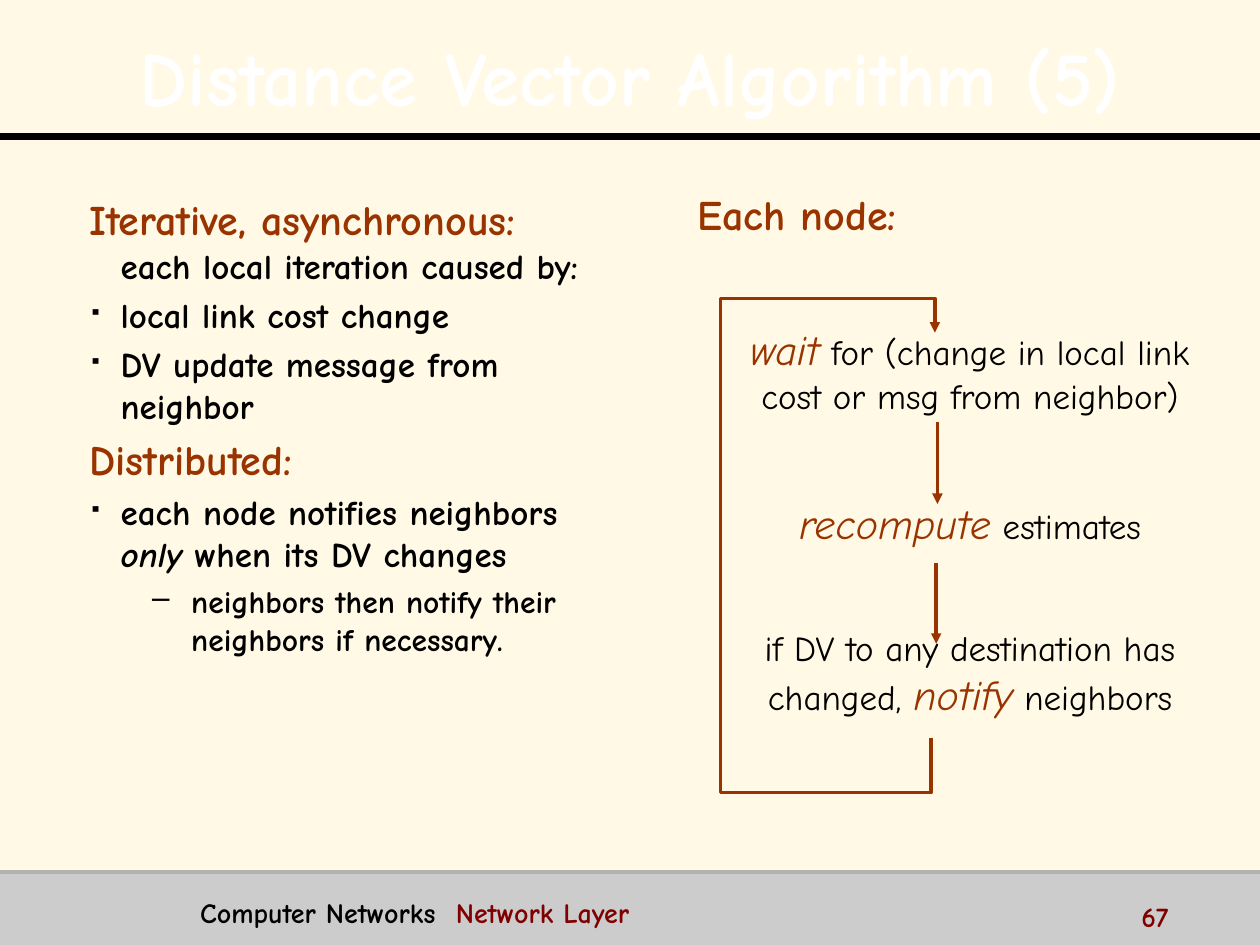
from lxml import etree
from pptx import Presentation
from pptx.dml.color import RGBColor
from pptx.enum.shapes import MSO_CONNECTOR, MSO_SHAPE
from pptx.enum.text import MSO_ANCHOR, PP_ALIGN
from pptx.oxml import parse_xml
from pptx.oxml.ns import nsdecls, qn
from pptx.util import Inches, Pt

LEFT, CENTER = PP_ALIGN.LEFT, PP_ALIGN.CENTER
TOP, MIDDLE = MSO_ANCHOR.TOP, MSO_ANCHOR.MIDDLE
STRAIGHT = MSO_CONNECTOR.STRAIGHT
RECT = MSO_SHAPE.RECTANGLE

FONT = "Comic Neue"
COLORS = {
    "paper": "FFF9E6", "band": "CCCCCC", "rule": "B2B2B2", "black": "000000",
    "white": "FFFFFF", "rust": "993300", "maroon": "800000",
}


def rgb(name):
    return RGBColor.from_string(COLORS[name])


def add_run(p, text, size=20, color="black", bold=False, italic=False, shadow=False):
    r = p.add_run()
    r.text = text
    r.font.size = Pt(size)
    r.font.bold, r.font.italic = bold, italic
    r.font.color.rgb = rgb(color)
    if shadow:
        r.font._element.append(parse_xml(
            f'<a:effectLst {nsdecls("a")}><a:outerShdw dist="35921" dir="2700000">'
            '<a:srgbClr val="000000"/></a:outerShdw></a:effectLst>'))
    r.font.name = FONT


def add_box(s, box, align=LEFT, anchor=TOP):
    """Add a wrapping text box and return its text frame."""
    tf = s.shapes.add_textbox(*map(Inches, box)).text_frame
    tf.word_wrap = True
    tf.vertical_anchor = anchor
    tf.paragraphs[0].alignment = align
    return tf


def add_text(s, box, text, align=LEFT, anchor=TOP, line_spacing=None, **fmt):
    p = add_box(s, box, align, anchor).paragraphs[0]
    p.line_spacing = line_spacing
    add_run(p, text, **fmt)


def set_indent(p, margin, hang, bullet=None, percent=100):
    pPr = p._p.get_or_add_pPr()
    pPr.set("marL", str(Inches(margin)))
    pPr.set("indent", str(-Inches(hang)))
    if bullet:
        color = etree.SubElement(pPr, qn("a:buClr"))
        etree.SubElement(color, qn("a:srgbClr"), val=COLORS["black"])
        etree.SubElement(pPr, qn("a:buSzPct"), val=str(percent * 1000))
        etree.SubElement(pPr, qn("a:buChar"), char=bullet)


def style_line(sp, color, width, arrow=False):
    sp.line.color.rgb = rgb(color)
    sp.line.width = Pt(width)
    if arrow:
        etree.SubElement(sp.line._get_or_add_ln(), qn("a:tailEnd"), type="triangle")


def add_line(s, start, end, color, width, arrow=False):
    line = s.shapes.add_connector(STRAIGHT, *map(Inches, start + end))
    style_line(line, color, width, arrow)
    etree.SubElement(line._element.spPr, qn("a:effectLst"))


def add_loop(s, points):
    """Draw the open path that leads from the last step to the first."""
    points = [(Inches(x), Inches(y)) for x, y in points]
    builder = s.shapes.build_freeform(*points[0])
    builder.add_line_segments(points[1:], close=False)
    sp = builder.convert_to_shape()
    sp.shadow.inherit = False
    sp.fill.background()
    style_line(sp, "rust", 2, arrow=True)


def add_outline(s):
    head = {"size": 24, "color": "rust"}
    plain, point = (0.25, 0.25), (0.25, 0.25, "▪", 50)
    items = [
        (plain, [("Iterative, asynchronous: ", head), ("each local iteration caused by:", {})]),
        (point, [("local link cost change", {})]),
        (point, [("DV update message from neighbor", {})]),
        (plain, [("Distributed:", head)]),
        (point, [("each node notifies neighbors ", {}), ("only", {"italic": True}),
                 (" when its DV changes", {})]),
        ((0.81, 0.31, "–"), [("neighbors then notify their neighbors if necessary.",
                              {"size": 18})]),
    ]
    tf = add_box(s, (0.61, 1.49, 4.14, 5.08))
    for i, (indent, runs) in enumerate(items):
        p = tf.add_paragraph() if i else tf.paragraphs[0]
        set_indent(p, *indent)
        if i:
            p.space_before = Pt(4)
        for text, fmt in runs:
            add_run(p, text, bold=True, **fmt)


def add_flow(s):
    verb = {"size": 24, "color": "rust", "italic": True}
    steps = [
        (2.52, 0.85, [("wait", verb),
                      (" for (change in local link cost or msg from neighbor)", {})]),
        (3.9, 0.5, [("recompute", verb), (" estimates", {})]),
        (4.92, 0.85, [("if DV to any destination has changed, ", {}),
                      ("notify", verb), (" neighbors", {})]),
    ]
    for top, height, runs in steps:
        p = add_box(s, (5.63, top, 4.14, height), CENTER).paragraphs[0]
        for text, fmt in runs:
            add_run(p, text, **fmt)
    for x, top, bottom in [(7.44, 3.35, 4), (7.43, 4.47, 5.11)]:
        add_line(s, (x, top), (x, bottom), "rust", 2, arrow=True)
    add_loop(s, [(7.39, 5.86), (7.39, 6.29), (5.72, 6.29),
                 (5.72, 2.37), (7.42, 2.37), (7.42, 2.64)])


def main():
    prs = Presentation()
    prs.slide_width, prs.slide_height = Inches(10), Inches(7.5)
    s = prs.slides.add_slide(prs.slide_layouts[6])
    s.background.fill.solid()
    s.background.fill.fore_color.rgb = rgb("paper")

    # Footer band and rules
    band = s.shapes.add_shape(RECT, 0, Inches(6.92), Inches(10), Inches(0.58))
    band.shadow.inherit = False
    band.fill.solid()
    band.fill.fore_color.rgb = rgb("band")
    band.line.fill.background()
    add_line(s, (0, 1.08), (10, 1.08), "black", 4)
    add_line(s, (0, 6.92), (10, 6.92), "rule", 2)

    # Title
    add_text(s, (0.2, 0.13, 9.61, 0.87), "Distance Vector Algorithm (5)", CENTER, MIDDLE,
             line_spacing=1.1, size=44, color="white", bold=True, shadow=True)

    # Left column: properties of the algorithm
    add_outline(s)

    # Right column: what each node does
    add_text(s, (4.92, 1.45, 2.81, 0.5), "Each node:", CENTER,
             size=24, color="rust", bold=True)
    add_flow(s)

    # Footer texts
    for box, text, color in [
        ((1.49, 7.06, 2.1, 0.31), "Computer Networks", "black"),
        ((3.52, 7.06, 2, 0.31), "Network Layer", "maroon"),
        ((8.96, 7.09, 1, 0.25), "67", "maroon"),
    ]:
        add_text(s, box, text, size=16, color=color, bold=True)

    prs.save("out.pptx")


if __name__ == "__main__":
    main()
